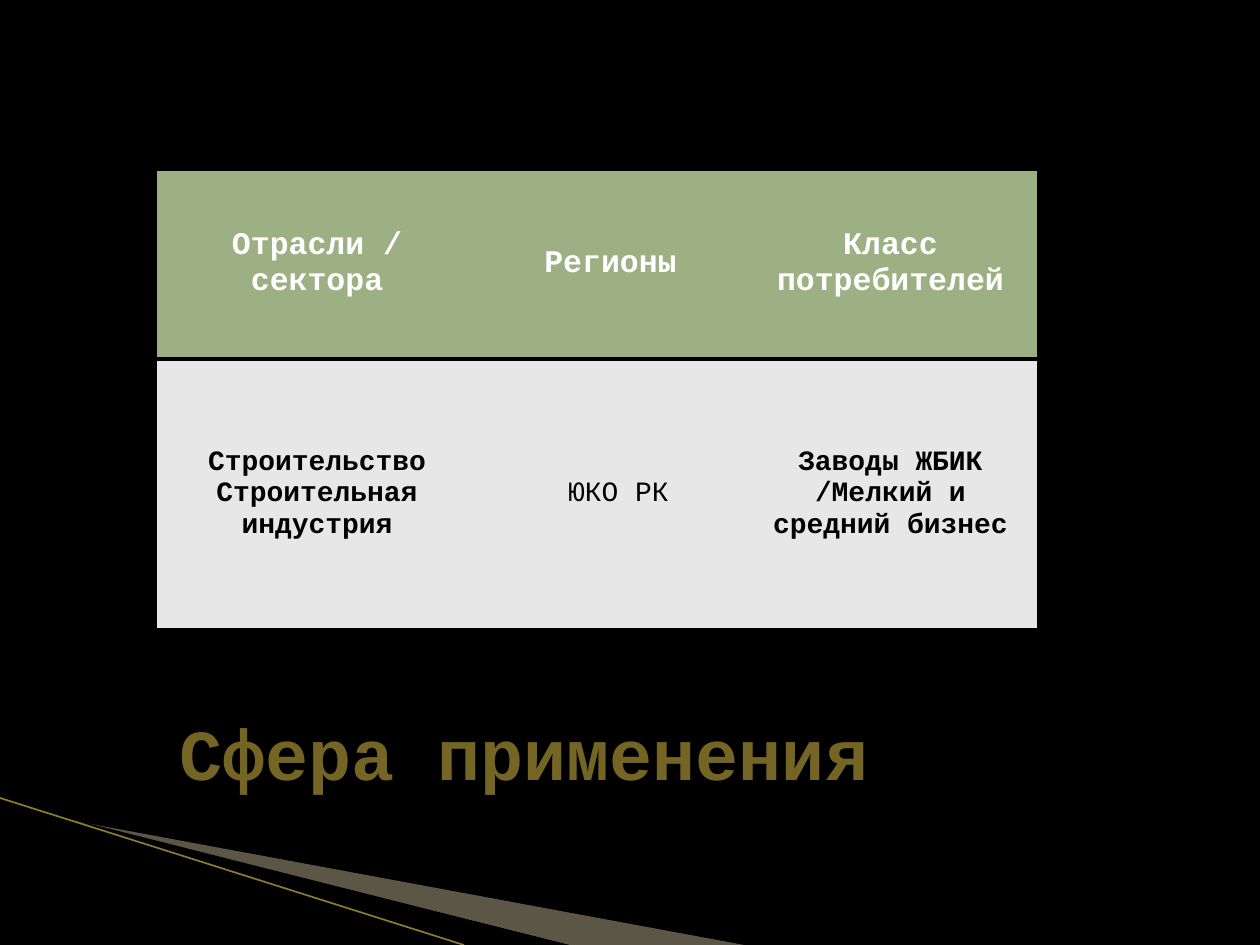
"""Build the slide with a table of application areas."""
from dataclasses import dataclass

from lxml.etree import SubElement
from pptx import Presentation
from pptx.dml.color import RGBColor
from pptx.enum.shapes import MSO_CONNECTOR
from pptx.enum.text import MSO_ANCHOR, PP_ALIGN
from pptx.oxml import parse_xml
from pptx.oxml.ns import nsdecls, qn
from pptx.slide import Slide
from pptx.table import _Cell
from pptx.text.text import _Paragraph
from pptx.util import Emu, Pt

PX_PER_INCH = 126


@dataclass(frozen=True)
class Theme:
    font: str = "Courier New"
    back: str = "000000"
    title: str = "756525"
    header: str = "9CB084"
    header_text: str = "FFFFFF"
    body: str = "E7E7E7"
    body_text: str = "000000"
    wedge: str = "E4D7AD"
    accent_line: str = "8C7B35"
    title_size: int = 41
    header_size: int = 18
    body_size: int = 16
    border: int = 2
    accent_width: float = 0.95


@dataclass(frozen=True)
class Wedge:
    frame: tuple[int, int, int, int]
    points: tuple[tuple[int, int], ...]
    color: str
    opacity: int = 100


@dataclass(frozen=True)
class CellText:
    text: str
    bold: bool = True
    indent: int = 0


@dataclass(frozen=True)
class TableRow:
    height: int
    fill: str
    color: str
    size: int
    cells: tuple[CellText, ...]


THEME = Theme()
WEDGES = (
    Wedge((98, 689, 524, 199), ((69, 820), (744, 945), (570, 945)), THEME.wedge, 40),
    Wedge((-8, 798, 524, 116), ((67, 818), (568, 945), (468, 945)), THEME.back),
)
COLUMN_WIDTHS = (320, 267, 293)
ROWS = (
    TableRow(190, THEME.header, THEME.header_text, THEME.header_size, (
        CellText("Отрасли / сектора"),
        CellText("Регионы"),
        CellText("Класс потребителей"),
    )),
    TableRow(271, THEME.body, THEME.body_text, THEME.body_size, (
        CellText("Строительство Строительная индустрия"),
        CellText("ЮКО РК", bold=False, indent=16),
        CellText("Заводы ЖБИК /Мелкий и средний бизнес"),
    )),
)


def px(n: int) -> Emu:
    """Turn pixels into EMU."""
    return Emu(round(n * 914400 / PX_PER_INCH))


def rgb(color: str) -> RGBColor:
    """Turn a hex string into a colour."""
    return RGBColor.from_string(color)


def add_run(p: _Paragraph, text: str, size: int, color: str, bold: bool) -> None:
    """Add one formatted run to a paragraph."""
    r = p.add_run()
    r.text = text
    r.font.name = THEME.font
    r.font.size = Pt(size)
    r.font.bold = bold
    r.font.color.rgb = rgb(color)


def draw_wedge(s: Slide, wedge: Wedge) -> None:
    """Draw a filled triangle whose outline reaches past its frame."""
    start, *rest = [(px(x), px(y)) for x, y in wedge.points]
    builder = s.shapes.build_freeform(*start)
    builder.add_line_segments(rest, close=True)
    sp = builder.convert_to_shape()
    left, top, width, height = map(px, wedge.frame)
    dx, dy = sp.left - left, sp.top - top
    for outline in sp._element.spPr.iter(qn("a:path")):
        outline.set("w", str(width))
        outline.set("h", str(height))
        for pt in outline.iter(qn("a:pt")):
            pt.set("x", str(int(pt.get("x")) + dx))
            pt.set("y", str(int(pt.get("y")) + dy))
    sp.left, sp.top, sp.width, sp.height = left, top, width, height
    sp.shadow.inherit = False
    sp.fill.solid()
    sp.fill.fore_color.rgb = rgb(wedge.color)
    sp.line.fill.background()
    if wedge.opacity < 100:
        clr = sp._element.spPr.find(f"{qn('a:solidFill')}/{qn('a:srgbClr')}")
        SubElement(clr, qn("a:alpha"), val=str(wedge.opacity * 1000))


def draw_accent_line(s: Slide) -> None:
    """Draw the thin diagonal line."""
    line = s.shapes.add_connector(
        MSO_CONNECTOR.STRAIGHT, px(0), px(798), px(464), px(945))
    line.line.color.rgb = rgb(THEME.accent_line)
    line.line.width = Pt(THEME.accent_width)
    SubElement(line._element.spPr, qn("a:effectLst"))


def draw_title(s: Slide, text: str) -> None:
    """Draw the slide title."""
    tf = s.shapes.add_textbox(px(167), px(679), px(1014), px(145)).text_frame
    tf.word_wrap = True
    tf.vertical_anchor = MSO_ANCHOR.MIDDLE
    add_run(tf.paragraphs[0], text, THEME.title_size, THEME.title, True)


def set_borders(cell: _Cell) -> None:
    """Give a cell top and bottom rules and no side rules."""
    solid = f'<a:solidFill><a:srgbClr val="{THEME.back}"/></a:solidFill>'
    sides = {"L": "<a:noFill/>", "R": "<a:noFill/>", "T": solid, "B": solid}
    tc_pr = cell._tc.get_or_add_tcPr()
    for i, (side, fill) in enumerate(sides.items()):
        tc_pr.insert(i, parse_xml(
            f'<a:ln{side} {nsdecls("a")} w="{Pt(THEME.border)}">{fill}</a:ln{side}>'))


def fill_cell(cell: _Cell, content: CellText, row: TableRow) -> None:
    """Format one table cell and write its text."""
    cell.fill.solid()
    cell.fill.fore_color.rgb = rgb(row.fill)
    set_borders(cell)
    cell.vertical_anchor = MSO_ANCHOR.MIDDLE
    cell.margin_left += px(content.indent)
    p = cell.text_frame.paragraphs[0]
    p.alignment = PP_ALIGN.CENTER
    add_run(p, content.text, row.size, row.color, content.bold)


def draw_table(s: Slide) -> None:
    """Draw the table of sectors, regions and consumers."""
    table = s.shapes.add_table(
        len(ROWS), len(COLUMN_WIDTHS), px(157), px(169),
        px(sum(COLUMN_WIDTHS)), px(sum(row.height for row in ROWS))).table
    for column, width in zip(table.columns, COLUMN_WIDTHS):
        column.width = px(width)
    for table_row, row in zip(table.rows, ROWS):
        table_row.height = px(row.height)
        for cell, content in zip(table_row.cells, row.cells):
            fill_cell(cell, content, row)


def main() -> None:
    """Build and save the presentation."""
    prs = Presentation()
    prs.slide_width, prs.slide_height = px(1260), px(945)
    s = prs.slides.add_slide(prs.slide_layouts[6])
    s.background.fill.solid()
    s.background.fill.fore_color.rgb = rgb(THEME.back)
    for wedge in WEDGES:
        draw_wedge(s, wedge)
    draw_accent_line(s)
    draw_title(s, "Сфера применения")
    draw_table(s)
    prs.save("out.pptx")


if __name__ == "__main__":
    main()
